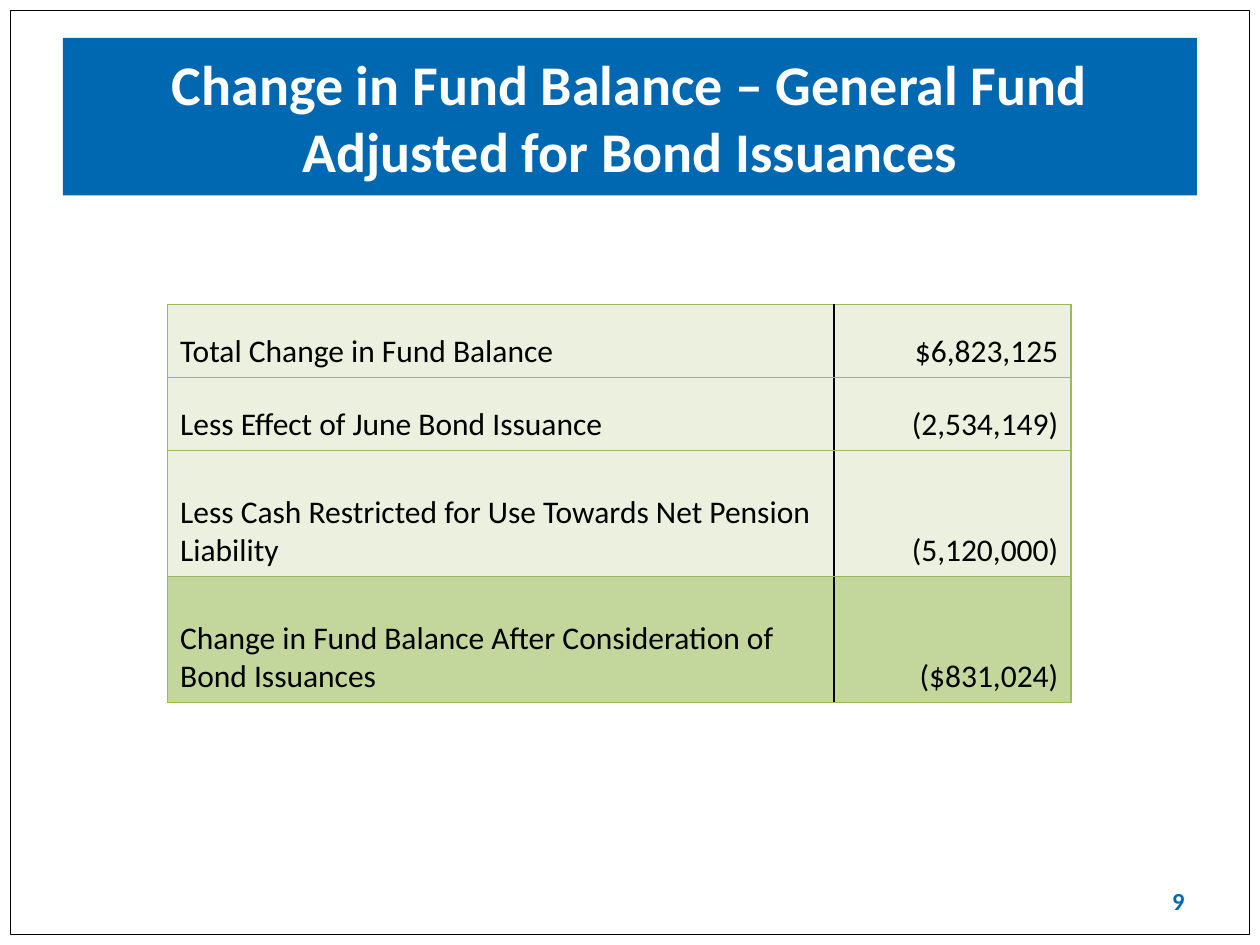
import dataclasses

import lxml.etree
import pptx
import pptx.dml.color
import pptx.enum.shapes
import pptx.enum.text
import pptx.oxml.ns
import pptx.table
import pptx.text.text
import pptx.util

RGBColor = pptx.dml.color.RGBColor
Align = pptx.enum.text.PP_ALIGN
Anchor = pptx.enum.text.MSO_ANCHOR

BLACK = RGBColor(0x00, 0x00, 0x00)
WHITE = RGBColor(0xFF, 0xFF, 0xFF)
BLUE = RGBColor(0x00, 0x67, 0xB1)
GREEN = RGBColor(0x9B, 0xBB, 0x59)
PALE_GREEN = RGBColor(0xEB, 0xF1, 0xDE)
MID_GREEN = RGBColor(0xC3, 0xD6, 0x9B)

SLIDE_WIDTH = pptx.util.Inches(10)
SLIDE_HEIGHT = pptx.util.Inches(7.5)
FONT = "Calibri"


@dataclasses.dataclass(frozen=True)
class Area:
    """Lengths as shares of the slide's width and height."""

    left: float
    top: float
    width: float
    height: float

    def box(self) -> tuple[int, int, int, int]:
        return (
            int(self.left * SLIDE_WIDTH),
            int(self.top * SLIDE_HEIGHT),
            int(self.width * SLIDE_WIDTH),
            int(self.height * SLIDE_HEIGHT),
        )


@dataclasses.dataclass(frozen=True)
class FundLine:
    label: str
    amount: str
    height: float  # inches
    fill: RGBColor = PALE_GREEN


FRAME_MARGIN_X, FRAME_MARGIN_Y = 0.0085, 0.0113
FRAME = Area(FRAME_MARGIN_X, FRAME_MARGIN_Y, 1 - 2 * FRAME_MARGIN_X, 1 - 2 * FRAME_MARGIN_Y)
TITLE = Area(0.05, 0.04, 0.9, 1 / 6)
FUND_TABLE = Area(0.133, 0.322, 0.717, 0.422)
PAGE_NUMBER = Area(0.717, 0.927, 0.233, 0.053)

COLUMN_WIDTHS = (5.29, 1.88)
FUND_LINES = (
    FundLine("Total Change in Fund Balance", "$6,823,125", 0.58),
    FundLine("Less Effect of June Bond Issuance", "(2,534,149)", 0.58),
    FundLine("Less Cash Restricted for Use Towards Net Pension Liability", "(5,120,000)", 1),
    FundLine(
        "Change in Fund Balance After Consideration of Bond Issuances",
        "($831,024)", 1, MID_GREEN,
    ),
)


def write(
    frame: pptx.text.text.TextFrame,
    text: str,
    *,
    size: float,
    color: RGBColor,
    bold: bool = False,
    align: Align = Align.LEFT,
) -> None:
    frame.word_wrap = True
    paragraph = frame.paragraphs[0]
    paragraph.text = text
    paragraph.alignment = align
    for run in paragraph.runs:
        run.font.name = FONT
        run.font.size = pptx.util.Pt(size)
        run.font.bold = bold
        run.font.color.rgb = color


def add_rectangle(slide, area: Area):
    rectangle = slide.shapes.add_shape(
        pptx.enum.shapes.MSO_SHAPE.RECTANGLE, *area.box()
    )
    rectangle.shadow.inherit = False
    return rectangle


def add_frame(slide) -> None:
    frame = add_rectangle(slide, FRAME)
    frame.fill.background()
    frame.line.color.rgb = BLACK
    frame.line.width = pptx.util.Pt(0.5)


def add_title(slide) -> None:
    banner = add_rectangle(slide, TITLE)
    banner.fill.solid()
    banner.fill.fore_color.rgb = BLUE
    banner.line.fill.background()
    banner.text_frame.vertical_anchor = Anchor.MIDDLE
    write(
        banner.text_frame,
        "Change in Fund Balance – General Fund\vAdjusted for Bond Issuances",
        size=32, color=WHITE, bold=True, align=Align.CENTER,
    )


def set_borders(cell: pptx.table._Cell, **colors: RGBColor) -> None:
    """Draw 1 pt borders; the sides L, R, T and B must come in that order."""
    properties = cell._tc.get_or_add_tcPr()
    for side, color in colors.items():
        line = lxml.etree.SubElement(
            properties, pptx.oxml.ns.qn(f"a:ln{side}"), w=str(pptx.util.Pt(1))
        )
        fill = lxml.etree.SubElement(line, pptx.oxml.ns.qn("a:solidFill"))
        lxml.etree.SubElement(fill, pptx.oxml.ns.qn("a:srgbClr"), val=str(color))


def add_fund_table(slide) -> None:
    table = slide.shapes.add_table(
        len(FUND_LINES), len(COLUMN_WIDTHS), *FUND_TABLE.box()
    ).table
    table.first_row = False
    table.horz_banding = False
    for column, width in zip(table.columns, COLUMN_WIDTHS):
        column.width = pptx.util.Inches(width)
    for row, fund_line in zip(table.rows, FUND_LINES):
        row.height = pptx.util.Inches(fund_line.height)
        label, amount = row.cells
        set_borders(label, L=GREEN, R=BLACK, T=GREEN, B=GREEN)
        set_borders(amount, L=BLACK, R=GREEN, T=GREEN, B=GREEN)
        for cell, text, align in (
            (label, fund_line.label, Align.LEFT),
            (amount, fund_line.amount, Align.RIGHT),
        ):
            cell.fill.solid()
            cell.fill.fore_color.rgb = fund_line.fill
            cell.vertical_anchor = Anchor.BOTTOM
            write(cell.text_frame, text, size=18, color=BLACK, align=align)


def add_page_number(slide) -> None:
    frame = slide.shapes.add_textbox(*PAGE_NUMBER.box()).text_frame
    frame.vertical_anchor = Anchor.MIDDLE
    write(frame, "9", size=14, color=BLUE, bold=True, align=Align.RIGHT)


def main() -> None:
    presentation = pptx.Presentation()
    presentation.slide_width = SLIDE_WIDTH
    presentation.slide_height = SLIDE_HEIGHT
    slide = presentation.slides.add_slide(presentation.slide_layouts[6])
    add_frame(slide)
    add_title(slide)
    add_fund_table(slide)
    add_page_number(slide)
    presentation.save("out.pptx")


if __name__ == "__main__":
    main()
